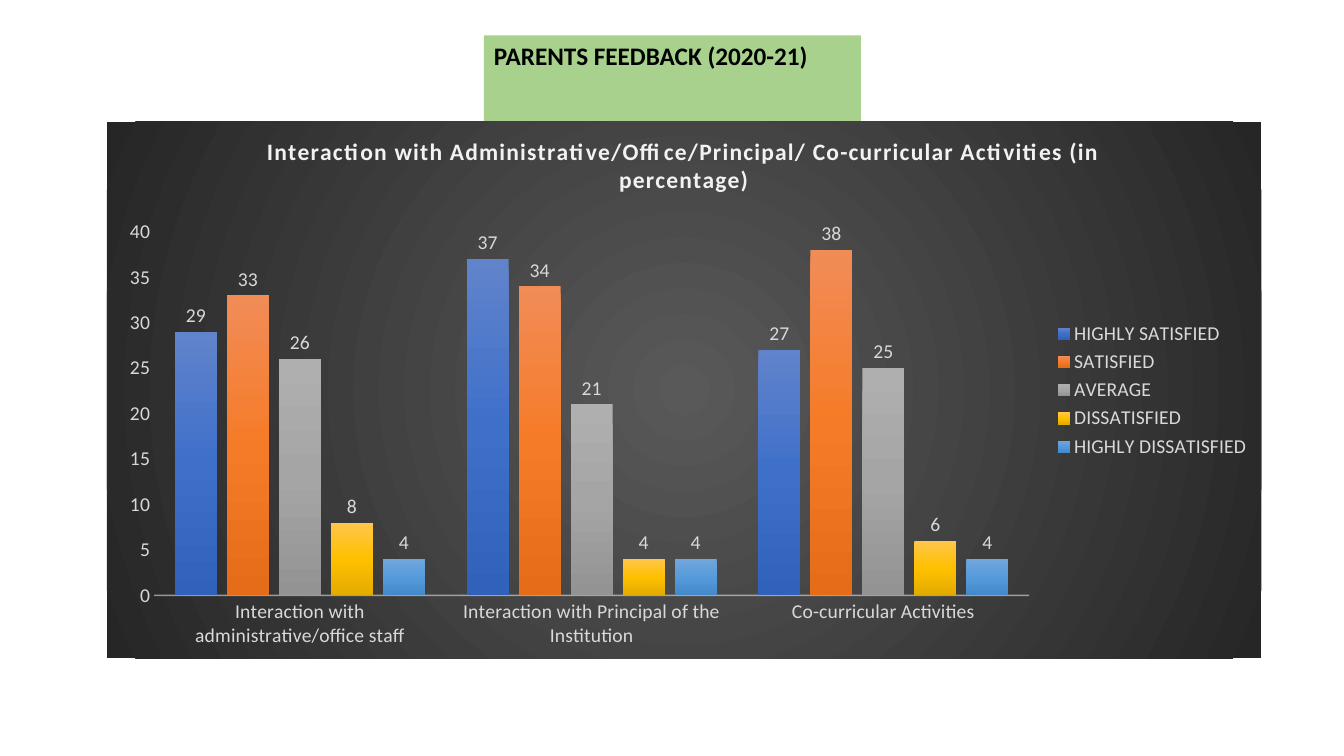
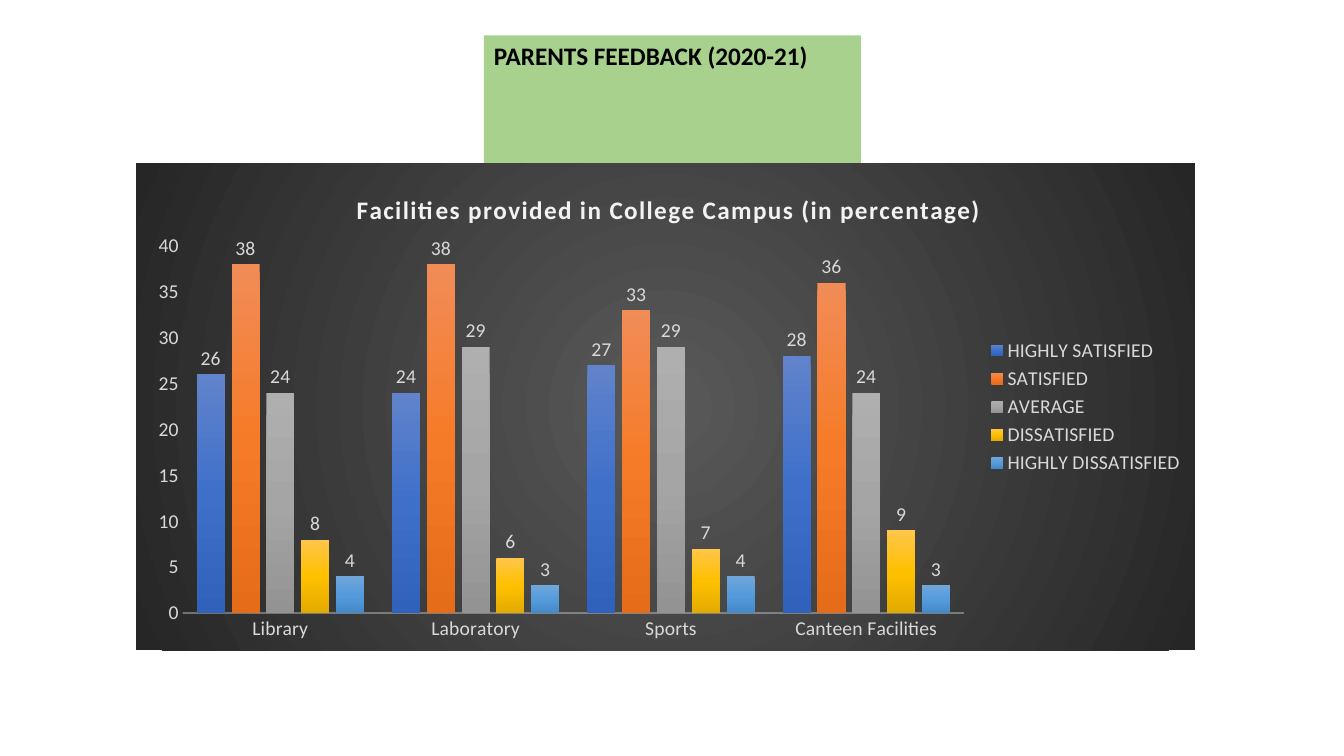
from dataclasses import dataclass

import pptx
import pptx.chart.data
import pptx.dml.color
import pptx.enum.chart
import pptx.enum.text
import pptx.oxml
import pptx.oxml.ns
import pptx.util

WIDE, HIGH = 13.33, 7.5
FACE = "Calibri"
HEADING = "PARENTS FEEDBACK (2020-21)"
GREEN, BLACK, PALE, SOFT = "A9D18E", "000000", "D9D9D9", "F2F2F2"
DARK = ("595959", "262626")
RADIAL = ('<a:path path="circle"><a:fillToRect l="50000" t="50000" '
          'r="50000" b="50000"/></a:path>')
LINEAR = '<a:lin ang="5400000" scaled="0"/>'
SPACES = pptx.oxml.ns.nsdecls("a", "c")


@dataclass(frozen=True)
class Box:
    """Place and size in percent of the slide, or of the chart."""
    left: float
    top: float
    width: float
    height: float

    def lengths(self) -> tuple[pptx.util.Length, ...]:
        return tuple(pptx.util.Inches(share * side / 100) for share, side in (
            (self.left, WIDE), (self.top, HIGH),
            (self.width, WIDE), (self.height, HIGH)))


@dataclass(frozen=True)
class Rating:
    name: str
    shades: tuple[str, ...]


@dataclass(frozen=True)
class Survey:
    title: str
    size: float
    box: Box
    start: tuple[float, float]
    plot: Box
    topics: tuple[str, ...]
    scores: tuple[tuple[int, ...], ...]


RATINGS = (
    Rating("HIGHLY SATISFIED", ("6183CB", "3E70CA", "3062BB")),
    Rating("SATISFIED", ("F18C57", "F67B28", "E56C19")),
    Rating("AVERAGE", ("AFAFAF", "A5A5A5", "939393")),
    Rating("DISSATISFIED", ("FFC64B", "FFC000", "E3AB00")),
    Rating("HIGHLY DISSATISFIED", ("71A6DB", "559BDB", "448ACA")),
)
BANNER = Box(36, 4.67, 28.05, 5.33)
SURVEYS = (
    Survey(
        "Interaction with Administrative/Office/Principal/ "
        "Co-curricular Activities (in percentage)",
        16.8, Box(7.95, 16.13, 85.9, 70.93), (13.5, 1.7),
        Box(4.1, 20.5, 75.8, 67.8),
        ("Interaction with administrative/office staff",
         "Interaction with Principal of the Institution",
         "Co-curricular Activities"),
        ((29, 37, 27), (33, 34, 38), (26, 21, 25), (8, 4, 6), (4, 4, 4))),
    Survey(
        "Facilities provided in College Campus (in percentage)",
        18, Box(10.13, 21.6, 78.77, 64.4), (20.4, 5),
        Box(4.4, 17, 73.8, 75.4),
        ("Library", "Laboratory", "Sports", "Canteen Facilities"),
        ((26, 24, 27, 28), (38, 38, 33, 36), (24, 29, 29, 24),
         (8, 6, 7, 9), (4, 3, 4, 3))),
)


def color(code: str) -> pptx.dml.color.RGBColor:
    return pptx.dml.color.RGBColor.from_string(code)


def style(font, size: float, code: str, bold: bool = False) -> None:
    font.name, font.bold = FACE, bold
    font.size = pptx.util.Pt(size)
    font.color.rgb = color(code)


def blend(shades: tuple[str, ...], course: str):
    """Make a gradient fill with evenly spaced stops."""
    step = 100000 // (len(shades) - 1)
    stops = "".join(
        f'<a:gs pos="{rank * step}"><a:srgbClr val="{shade}"/></a:gs>'
        for rank, shade in enumerate(shades))
    return pptx.oxml.parse_xml(
        f'<a:gradFill {SPACES} rotWithShape="1"><a:gsLst>{stops}</a:gsLst>'
        f'{course}</a:gradFill>')


def layout(marks: dict[str, float], inner: bool = False):
    """Make a fixed chart layout from percentages."""
    target = '<c:layoutTarget val="inner"/>' if inner else ""
    modes = "".join(f'<c:{axis}Mode val="edge"/>' for axis in "xy")
    sides = "".join(f'<c:{key} val="{share / 100:.3f}"/>'
                    for key, share in marks.items())
    return pptx.oxml.parse_xml(
        f'<c:layout {SPACES}><c:manualLayout>{target}{modes}{sides}'
        f'</c:manualLayout></c:layout>')


def place(chart, survey: Survey) -> None:
    """Fix the title and the plot inside the chart."""
    root = chart.element
    for old in root.xpath("c:chart/c:title/c:layout | c:chart/c:plotArea/c:layout"):
        old.getparent().remove(old)
    left, top = survey.start
    root.xpath("c:chart/c:title/c:tx")[0].addnext(layout({"x": left, "y": top}))
    plot = survey.plot
    root.xpath("c:chart/c:plotArea")[0].insert(0, layout(
        {"x": plot.left, "y": plot.top, "w": plot.width, "h": plot.height}, True))


def paint(chart) -> None:
    """Fill the chart ground and soften the category line."""
    root = chart.element
    ground = pptx.oxml.parse_xml(
        f"<c:spPr {SPACES}><a:ln><a:noFill/></a:ln></c:spPr>")
    ground.insert(0, blend(DARK, RADIAL))
    root.xpath("c:chart")[0].addnext(ground)
    for rating, bar in zip(RATINGS, root.xpath(".//c:ser")):
        bar.get_or_add_spPr().insert(0, blend(rating.shades, LINEAR))
    shade = root.xpath(".//c:catAx/c:spPr/a:ln//a:srgbClr")[0]
    shade.append(pptx.oxml.parse_xml(f'<a:alpha {SPACES} val="54000"/>'))


def set_axes(chart) -> None:
    for axis in (chart.category_axis, chart.value_axis):
        axis.has_major_gridlines = False
        axis.major_tick_mark = pptx.enum.chart.XL_TICK_MARK.NONE
        style(axis.tick_labels.font, 14, PALE)
    line = chart.category_axis.format.line
    line.width = pptx.util.Pt(1)
    line.color.rgb = color(SOFT)
    scale = chart.value_axis
    scale.minimum_scale, scale.maximum_scale, scale.major_unit = 0, 40, 5
    scale.format.line.fill.background()


def add_graph(slide, survey: Survey) -> None:
    data = pptx.chart.data.CategoryChartData()
    data.categories = survey.topics
    for rating, scores in zip(RATINGS, survey.scores):
        data.add_series(rating.name, scores)
    chart = slide.shapes.add_chart(
        pptx.enum.chart.XL_CHART_TYPE.COLUMN_CLUSTERED,
        *survey.box.lengths(), data).chart
    style(chart.font, 14, BLACK)

    chart.has_title = True
    frame = chart.chart_title.text_frame
    frame.text = survey.title
    style(frame.paragraphs[0].font, survey.size, SOFT, True)
    chart.element.xpath("c:chart/c:title//a:defRPr")[0].set("spc", "100")

    chart.has_legend = True
    chart.legend.position = pptx.enum.chart.XL_LEGEND_POSITION.RIGHT
    chart.legend.include_in_layout = False
    style(chart.legend.font, 14, PALE)

    plot = chart.plots[0]
    plot.gap_width, plot.overlap, plot.vary_by_categories = 100, -24, False
    for bars in plot.series:
        labels = bars.data_labels
        labels.show_value = True
        labels.position = pptx.enum.chart.XL_LABEL_POSITION.OUTSIDE_END
        style(labels.font, 14, PALE)
    set_axes(chart)
    place(chart, survey)
    paint(chart)


def add_banner(slide) -> None:
    title = slide.shapes.title
    title.left, title.top, title.width, title.height = BANNER.lengths()
    title.fill.solid()
    title.fill.fore_color.rgb = color(GREEN)
    frame = title.text_frame
    frame.text = HEADING
    frame.auto_size = pptx.enum.text.MSO_AUTO_SIZE.SHAPE_TO_FIT_TEXT
    frame.vertical_anchor = pptx.enum.text.MSO_ANCHOR.TOP
    line = frame.paragraphs[0]
    line.alignment = pptx.enum.text.PP_ALIGN.LEFT
    style(line.font, 18, BLACK, True)


def main() -> None:
    deck = pptx.Presentation()
    deck.slide_width = pptx.util.Inches(WIDE)
    deck.slide_height = pptx.util.Inches(HIGH)
    for survey in SURVEYS:
        slide = deck.slides.add_slide(deck.slide_layouts[5])
        add_graph(slide, survey)
        add_banner(slide)
    deck.save("out.pptx")


if __name__ == "__main__":
    main()
